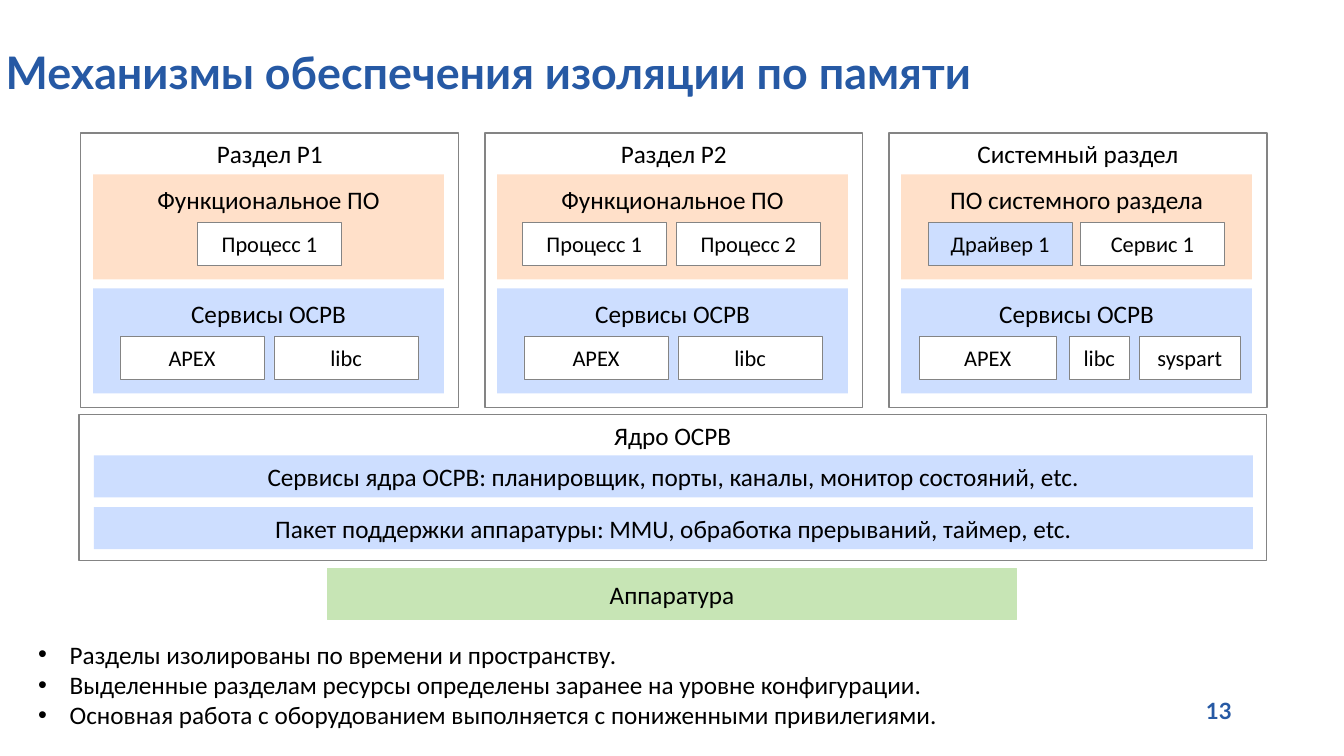
from lxml import etree
from pptx import Presentation
from pptx import util as u
from pptx.dml.color import RGBColor
from pptx.enum import shapes, text
from pptx.oxml import ns

WHITE, GREY, BLACK = "FFFFFF", "848484", "000000"
BLUE, ORANGE, GREEN, ACCENT = "CDDEFF", "FFCFAB", "C7E5B5", "2659A4"
TOP, MIDDLE = text.MSO_ANCHOR.TOP, text.MSO_ANCHOR.MIDDLE
LEFT, CENTER, RIGHT = text.PP_ALIGN.LEFT, text.PP_ALIGN.CENTER, text.PP_ALIGN.RIGHT


def color(value):
    return RGBColor.from_string(value)


class Diagram:
    """Holds the slide and the style of its elements."""
    body_font, heading_font = "Calibri", "Lato"

    def __init__(self, slide):
        self.slide = slide

    def set_text(self, frame, lines, size, align, font=body_font, ink=BLACK, bold=False):
        frame.text = "\n".join(lines)
        for paragraph in frame.paragraphs:
            paragraph.alignment = align
            for run in paragraph.runs:
                run.font.name = font
                run.font.size = u.Pt(size)
                run.font.bold = bold
                run.font.color.rgb = color(ink)

    def box(self, left, top, width, height, label, fill=WHITE, line=None,
            weight=0.5, size=18, anchor=MIDDLE, inset=4, opacity=100):
        shape = self.slide.shapes.add_shape(
            shapes.MSO_SHAPE.RECTANGLE, u.Pt(left), u.Pt(top), u.Pt(width), u.Pt(height))
        shape.shadow.inherit = False
        shape.fill.solid()
        shape.fill.fore_color.rgb = color(fill)
        if opacity < 100:
            fill_color = shape.element.spPr.find(ns.qn("a:solidFill"))[0]
            etree.SubElement(fill_color, ns.qn("a:alpha"), val=str(opacity * 1000))
        if line:
            shape.line.color.rgb = color(line)
            shape.line.width = u.Pt(weight)
        else:
            shape.line.fill.background()
        frame = shape.text_frame
        frame.word_wrap = True
        frame.vertical_anchor = anchor
        frame.margin_left = frame.margin_right = u.Pt(4)
        frame.margin_top = u.Pt(inset)
        frame.margin_bottom = u.Pt(4)
        self.set_text(frame, [label], size, CENTER)

    def text_box(self, left, top, width, height, lines, size, align=LEFT,
                 anchor=TOP, margin=7.2, **style):
        shape = self.slide.shapes.add_textbox(
            u.Pt(left), u.Pt(top), u.Pt(width), u.Pt(height))
        frame = shape.text_frame
        frame.word_wrap = True
        frame.vertical_anchor = anchor
        frame.margin_left = frame.margin_right = u.Pt(margin)
        self.set_text(frame, lines, size, align, **style)
        return frame

    def heading(self, left, top, width, height, label, size, **style):
        return self.text_box(left, top, width, height, [label], size, anchor=MIDDLE,
                             font=self.heading_font, ink=ACCENT, bold=True, **style)

    def bullets(self, left, top, width, height, lines, indent=22.5):
        frame = self.text_box(left, top, width, height, lines, 18)
        for paragraph in frame.paragraphs:
            properties = paragraph._p.get_or_add_pPr()
            properties.set("marL", str(u.Pt(indent)))
            properties.set("indent", str(-u.Pt(indent)))
            etree.SubElement(properties, ns.qn("a:buFont"), typeface="Arial")
            etree.SubElement(properties, ns.qn("a:buChar"), char="•")

    def layer(self, left, top, title, fill, opacity, modules):
        """A coloured band with a title and a row of modules."""
        self.box(left + 8.8, top, 250.6, 75, title, fill, anchor=TOP, inset=7,
                 opacity=opacity)
        for offset, width, label, module_fill in modules:
            self.box(left + offset, top + 34.2, width, 31, label, module_fill, GREY, size=16)

    def partition(self, left, title, software, processes, services):
        self.box(left, 95, 270, 196, title, line=GREY, weight=1, anchor=TOP)
        self.layer(left, 124.6, software, ORANGE, 64, processes)
        self.layer(left, 206, "Сервисы ОСРВ", BLUE, 100, services)


# Modules of a layer: offset from the partition, width, label, fill
USER_SERVICES = [(28, 103, "APEX", WHITE), (138, 103, "libc", WHITE)]
PARTITIONS = [
    ("Раздел P1", "Функциональное ПО",
     [(83.3, 103, "Процесс 1", WHITE)], USER_SERVICES),
    ("Раздел P2", "Функциональное ПО",
     [(26.7, 103, "Процесс 1", WHITE), (136.8, 103, "Процесс 2", WHITE)], USER_SERVICES),
    ("Системный раздел", "ПО системного раздела",
     [(28, 103, "Драйвер 1", BLUE), (136.8, 103, "Сервис 1", WHITE)],
     [(21.6, 98, "APEX", WHITE), (129, 42.5, "libc", WHITE), (179, 72, "syspart", WHITE)]),
]
KERNEL_LAYERS = [
    "Сервисы ядра ОСРВ: планировщик, порты, каналы, монитор состояний, etc.",
    "Пакет поддержки аппаратуры: MMU, обработка прерываний, таймер, etc.",
]
CONCLUSIONS = [
    "Разделы изолированы по времени и пространству.",
    "Выделенные разделам ресурсы определены заранее на уровне конфигурации.",
    "Основная работа с оборудованием выполняется с пониженными привилегиями.",
]


def main():
    presentation = Presentation()
    presentation.slide_width, presentation.slide_height = u.Pt(960), u.Pt(540)
    diagram = Diagram(presentation.slides.add_slide(presentation.slide_layouts[6]))

    # Title
    title = diagram.heading(0, 1.4, 951, 104.4,
                            "Механизмы обеспечения изоляции по памяти", 32, margin=4)
    title.paragraphs[0].line_spacing = 0.9

    # Partitions
    for index, partition in enumerate(PARTITIONS):
        diagram.partition(57.7 + index * 288.6, *partition)

    # Kernel and hardware
    diagram.box(56.5, 296, 848, 104.5, "Ядро ОСРВ", line=GREY, weight=1, anchor=TOP)
    for index, label in enumerate(KERNEL_LAYERS):
        diagram.box(67, 325.3 + index * 37, 828, 30, label, BLUE)
    diagram.box(234, 406, 492, 36.7, "Аппаратура", GREEN, GREEN)

    # Conclusions and page number
    diagram.bullets(20.2, 453, 880, 86, CONCLUSIONS)
    diagram.heading(853, 494, 34, 26.6, "13", 16, align=RIGHT)

    presentation.save("out.pptx")


if __name__ == "__main__":
    main()
